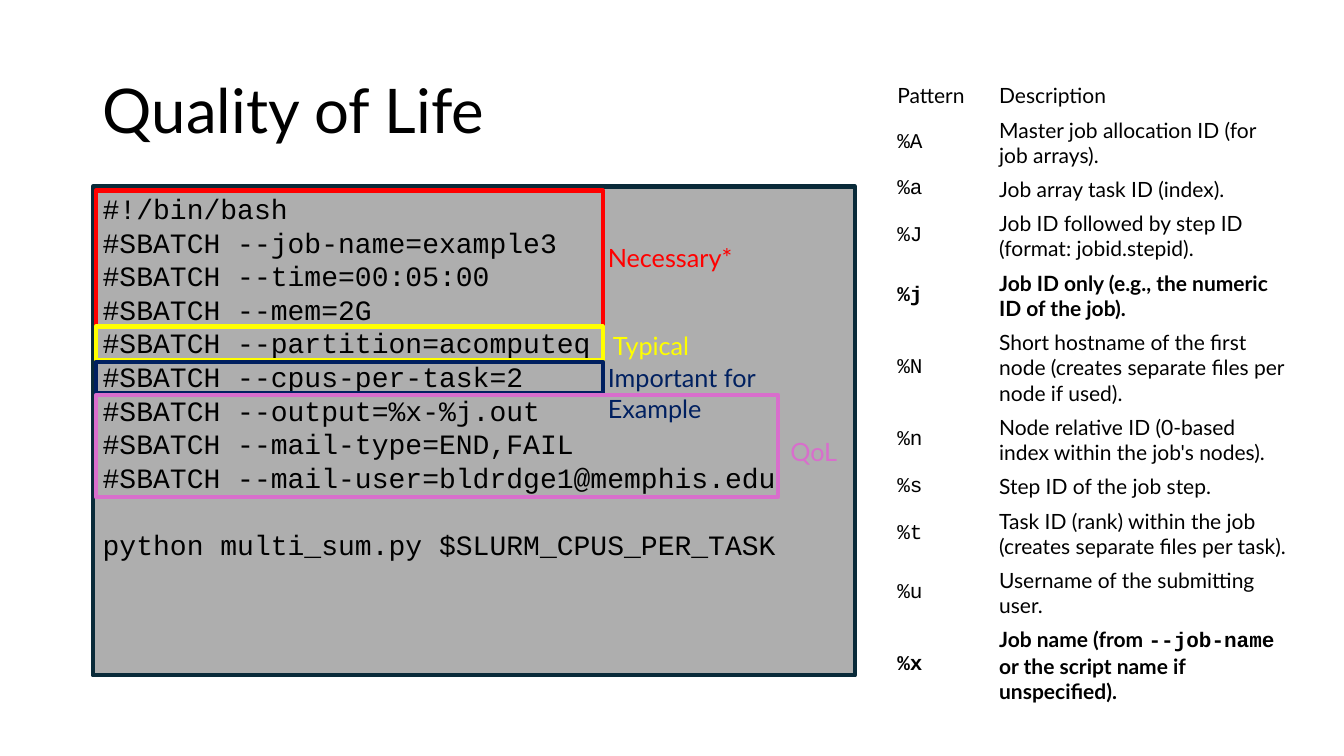
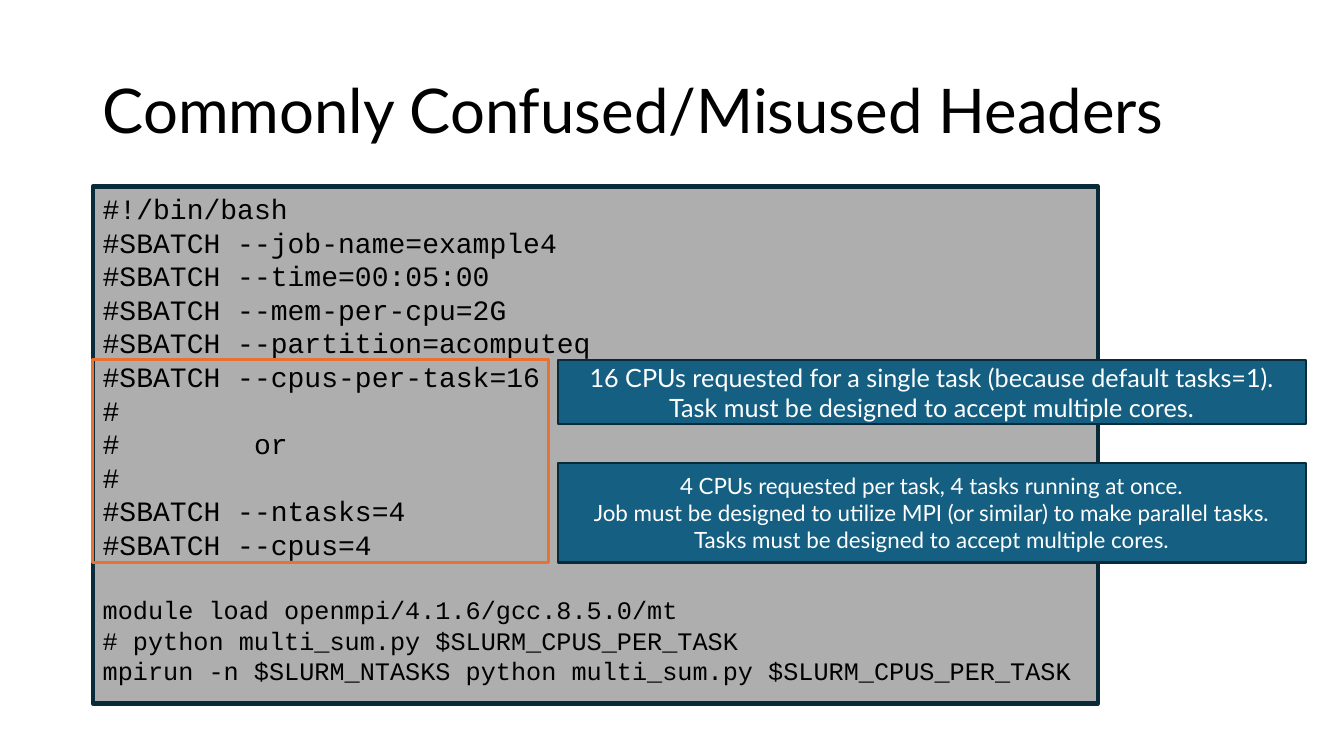
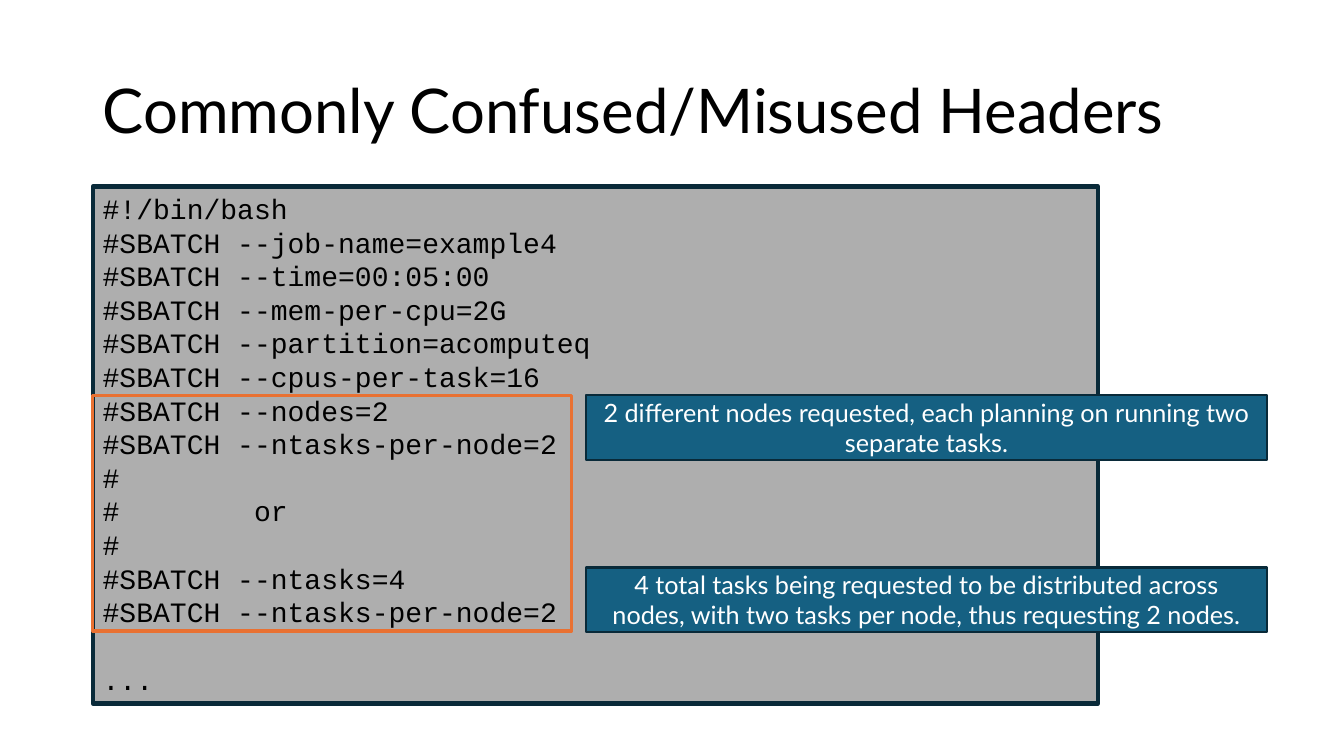
"""Build three slides about job script headers."""
from pptx import Presentation
from pptx.dml.color import RGBColor
from pptx.enum.shapes import MSO_SHAPE
from pptx.enum.text import MSO_ANCHOR, MSO_AUTO_SIZE, PP_ALIGN
from pptx.util import Pt

PX = 9144
SANS, MONO = "Lato", "Courier New"
BLACK, WHITE, GREY = "000000", "FFFFFF", "AEAEAE"
NAVY, BLUE, ORANGE = "092A39", "156082", "E97132"
RED, YELLOW, INDIGO, PINK = "FF0000", "FFFF00", "002060", "D86ECC"
LINE_HEIGHT = 1.2
TITLE_BOX = (92, 40, 1150, 145)
TABLE_LEFT, TABLE_TOP = 882, 78
COLUMN_WIDTHS = (101, 304)
CELL_MARGIN_X, CELL_MARGIN_Y, CELL_LINE = 8, 4, 25

COMMON_HEADERS = [
    "#!/bin/bash",
    "#SBATCH --job-name=example4",
    "#SBATCH --time=00:05:00",
    "#SBATCH --mem-per-cpu=2G",
    "#SBATCH --partition=acomputeq",
    "#SBATCH --cpus-per-task=16",
]

PATTERNS = [
    ("Pattern", "Description", 1, False),
    ("`%A`", "Master job allocation ID (for job arrays).", 2, False),
    ("`%a`", "Job array task ID (index).", 1, False),
    ("`%J`", "Job ID followed by step ID (format: jobid.stepid).", 2, False),
    ("`%j`", "Job ID only (e.g., the numeric ID of the job).", 2, True),
    ("`%N`", "Short hostname of the first node (creates separate files per node if used).", 3, False),
    ("`%n`", "Node relative ID (0-based index within the job's nodes).", 2, False),
    ("`%s`", "Step ID of the job step.", 1, False),
    ("`%t`", "Task ID (rank) within the job (creates separate files per task).", 2, False),
    ("`%u`", "Username of the submitting user.", 2, False),
    ("`%x`", "Job name (from `--job-name` or the script name if unspecified).", 3, True),
]

SLIDES = [
    {
        "title": "Quality of Life",
        "code_box": (92, 185, 756, 485),
        "code": [
            (20, [
                "#!/bin/bash",
                "#SBATCH --job-name=example3",
                "#SBATCH --time=00:05:00",
                "#SBATCH --mem=2G",
                "#SBATCH --partition=acomputeq",
                "#SBATCH --cpus-per-task=2",
                "#SBATCH --output=%x-%j.out",
                "#SBATCH --mail-type=END,FAIL",
                "#SBATCH --mail-user=bldrdge1@memphis.edu",
            ]),
            (20, ["python multi_sum.py $SLURM_CPUS_PER_TASK"]),
        ],
        "frames": [
            ((95, 189, 503, 135), RED, 3),
            ((95, 324, 503, 33), YELLOW, 3),
            ((95, 359, 503, 31), INDIGO, 3),
            ((95, 392, 677, 101), PINK, 3),
        ],
        "labels": [
            ((593, 236, 148, 40), "Necessary*", RED),
            ((598, 323, 100, 40), "Typical", YELLOW),
            ((593, 355, 262, 40), "Important for Example", INDIGO),
            ((774, 428, 80, 40), "QoL", PINK),
        ],
        "notes": [],
        "patterns": PATTERNS,
    },
    {
        "title": "Commonly Confused/Misused Headers",
        "code_box": (92, 185, 997, 513),
        "code": [
            (20, COMMON_HEADERS + [
                "#",
                "#        or",
                "#",
                "#SBATCH --ntasks=4",
                "#SBATCH --cpus=4",
            ]),
            (18, [
                "module load openmpi/4.1.6/gcc.8.5.0/mt",
                "# python multi_sum.py $SLURM_CPUS_PER_TASK",
                "mpirun -n $SLURM_NTASKS python multi_sum.py $SLURM_CPUS_PER_TASK",
            ]),
        ],
        "frames": [((92, 357, 452, 201), ORANGE, 2.25)],
        "labels": [],
        "notes": [
            ((553, 357, 742, 64), 18, [
                "16 CPUs requested for a single task (because default tasks=1).",
                "Task must be designed to accept multiple cores.",
            ]),
            ((553, 459, 742, 99), 16, [
                "4 CPUs requested per task, 4 tasks running at once.",
                "Job must be designed to utilize MPI (or similar) to make parallel tasks.",
                "Tasks must be designed to accept multiple cores.",
            ]),
        ],
        "patterns": [],
    },
    {
        "title": "Commonly Confused/Misused Headers",
        "code_box": (92, 185, 997, 513),
        "code": [
            (20, COMMON_HEADERS + [
                "#SBATCH --nodes=2",
                "#SBATCH --ntasks-per-node=2",
                "#",
                "#        or",
                "#",
                "#SBATCH --ntasks=4",
                "#SBATCH --ntasks-per-node=2",
            ]),
            (20, ["..."]),
        ],
        "frames": [((92, 392, 475, 234), ORANGE, 2.25)],
        "labels": [],
        "notes": [
            ((581, 392, 676, 64), 18, [
                "2 different nodes requested, each planning on running two separate tasks.",
            ]),
            ((581, 563, 676, 64), 18, [
                "4 total tasks being requested to be distributed across nodes, "
                "with two tasks per node, thus requesting 2 nodes.",
            ]),
        ],
        "patterns": [],
    },
]


def color(value):
    return RGBColor.from_string(value)


def scaled(box):
    return [length * PX for length in box]


def write_paragraph(paragraph, text, size=18, font=SANS, fill=BLACK, bold=False,
                    align=PP_ALIGN.LEFT, spacing=None, before=None):
    paragraph.alignment = align
    if spacing is not None:
        paragraph.line_spacing = spacing
    if before is not None:
        paragraph.space_before = before
    for index, part in enumerate(text.split("`")):
        if part:
            run = paragraph.add_run()
            run.text = part
            run.font.name = MONO if index % 2 else font
            run.font.size = Pt(size)
            run.font.bold = bold
            run.font.color.rgb = color(fill)


def next_paragraph(frame):
    first = frame.paragraphs[0]
    return frame.add_paragraph() if first.runs else first


def add_box(slide, box, line, width, fill=None):
    shape = slide.shapes.add_shape(MSO_SHAPE.RECTANGLE, *scaled(box))
    shape.shadow.inherit = False
    shape.line.color.rgb = color(line)
    shape.line.width = Pt(width)
    if fill:
        shape.fill.solid()
        shape.fill.fore_color.rgb = color(fill)
    else:
        shape.fill.background()
    shape.text_frame.word_wrap = True
    return shape


def add_title(slide, text):
    title = slide.shapes.title
    title.left, title.top, title.width, title.height = scaled(TITLE_BOX)
    frame = title.text_frame
    frame.auto_size = MSO_AUTO_SIZE.NONE
    frame.vertical_anchor = MSO_ANCHOR.MIDDLE
    write_paragraph(frame.paragraphs[0], text, size=44, spacing=0.9)


def add_code(slide, box, blocks):
    frame = add_box(slide, box, NAVY, 3, GREY).text_frame
    frame.vertical_anchor = MSO_ANCHOR.TOP
    for block_index, (size, lines) in enumerate(blocks):
        for line_index, line in enumerate(lines):
            starts_block = block_index > 0 and line_index == 0
            write_paragraph(next_paragraph(frame), line, size=size, font=MONO,
                            spacing=Pt(size * LINE_HEIGHT),
                            before=Pt(20 * LINE_HEIGHT) if starts_block else None)


def add_label(slide, box, text, fill):
    frame = slide.shapes.add_textbox(*scaled(box)).text_frame
    frame.word_wrap = True
    write_paragraph(frame.paragraphs[0], text, fill=fill)


def add_note(slide, box, size, lines):
    frame = add_box(slide, box, NAVY, 1.5, BLUE).text_frame
    frame.vertical_anchor = MSO_ANCHOR.MIDDLE
    for line in lines:
        write_paragraph(next_paragraph(frame), line, size=size, fill=WHITE,
                        align=PP_ALIGN.CENTER)


def add_patterns(slide, patterns):
    heights = [2 * CELL_MARGIN_Y + CELL_LINE * lines + 1 for _, _, lines, _ in patterns]
    box = (TABLE_LEFT, TABLE_TOP, sum(COLUMN_WIDTHS), sum(heights))
    table = slide.shapes.add_table(len(patterns), len(COLUMN_WIDTHS), *scaled(box)).table
    table.first_row = table.horz_banding = False
    for column, width in zip(table.columns, COLUMN_WIDTHS):
        column.width = width * PX
    for row, height, (pattern, description, _, bold) in zip(table.rows, heights, patterns):
        row.height = height * PX
        for cell, text in zip(row.cells, (pattern, description)):
            cell.fill.background()
            cell.vertical_anchor = MSO_ANCHOR.MIDDLE
            cell.margin_left = cell.margin_right = CELL_MARGIN_X * PX
            cell.margin_top = cell.margin_bottom = CELL_MARGIN_Y * PX
            write_paragraph(cell.text_frame.paragraphs[0], text, size=15, bold=bold)


def main():
    presentation = Presentation()
    presentation.slide_width, presentation.slide_height = scaled((1333, 750))
    for content in SLIDES:
        slide = presentation.slides.add_slide(presentation.slide_layouts[5])
        add_title(slide, content["title"])
        add_code(slide, content["code_box"], content["code"])
        for box, line, width in content["frames"]:
            add_box(slide, box, line, width)
        for label in content["labels"]:
            add_label(slide, *label)
        for note in content["notes"]:
            add_note(slide, *note)
        if content["patterns"]:
            add_patterns(slide, content["patterns"])
    presentation.save("out.pptx")


if __name__ == "__main__":
    main()
